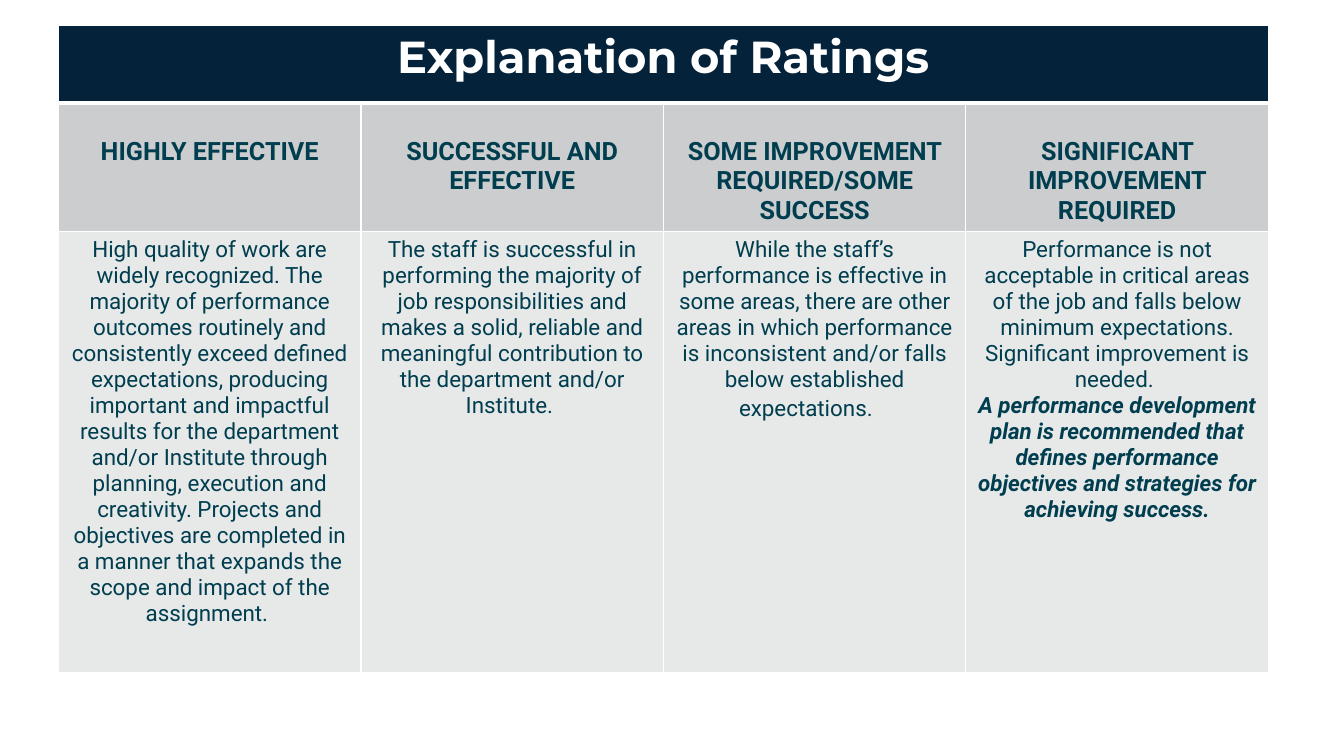
import lxml.etree
import pptx
import pptx.dml.color
import pptx.enum.text
import pptx.oxml.ns
import pptx.util

Inches = pptx.util.Inches
RGBColor = pptx.dml.color.RGBColor

NAVY = RGBColor(0x04, 0x23, 0x3B)
TEAL = RGBColor(0x00, 0x3E, 0x4F)
HEADING_GRAY = RGBColor(0xCC, 0xCD, 0xCE)
BODY_GRAY = RGBColor(0xE7, 0xE8, 0xE8)
WHITE = RGBColor(0xFF, 0xFF, 0xFF)

ROW_HEIGHTS = (0.77, 1.28, 4.37)
COLUMN_WIDTH = 3
HEADING_TOP_MARGIN = 0.34

RATINGS = [
    ("HIGHLY EFFECTIVE",
     "High quality of work are widely recognized. The majority of performance "
     "outcomes routinely and consistently exceed defined expectations, producing "
     "important and impactful results for the department and/or Institute through "
     "planning, execution and creativity. Projects and objectives are completed in "
     "a manner that expands the scope and impact of the assignment. "),
    ("SUCCESSFUL AND EFFECTIVE",
     "The staff is successful in performing the majority of job responsibilities "
     "and makes a solid, reliable and meaningful contribution to the department "
     "and/or Institute. "),
    ("SOME IMPROVEMENT REQUIRED/SOME SUCCESS",
     "While the staff’s performance is effective in some areas, there are other "
     "areas in which performance is inconsistent and/or falls below established "
     "expectations. "),
    ("SIGNIFICANT IMPROVEMENT REQUIRED",
     "Performance is not acceptable in critical areas of the job and falls below "
     "minimum expectations. Significant improvement is needed. "),
]
RECOMMENDATION = (
    "A performance development plan is recommended that defines performance "
    "objectives and strategies for achieving success."
)


def format_run(run, size, font_name="Roboto", color=TEAL, bold=False, italic=False):
    run.font.name = font_name
    run.font.size = pptx.util.Pt(size)
    run.font.color.rgb = color
    run.font.bold = bold
    run.font.italic = italic


def write_paragraph(paragraph, text, size, **style):
    paragraph.text = text
    paragraph.alignment = pptx.enum.text.PP_ALIGN.CENTER
    for run in paragraph.runs:
        format_run(run, size, **style)


def write_cell(cell, text, fill, size, **style):
    cell.fill.solid()
    cell.fill.fore_color.rgb = fill
    write_paragraph(cell.text_frame.paragraphs[0], text, size, **style)


def set_borders(cell, top=1, bottom=1):
    properties = cell._tc.get_or_add_tcPr()
    sides = (("lnL", 1), ("lnR", 1), ("lnT", top), ("lnB", bottom))
    for position, (side, points) in enumerate(sides):
        line = lxml.etree.Element(
            pptx.oxml.ns.qn(f"a:{side}"), w=str(pptx.util.Pt(points))
        )
        fill = lxml.etree.SubElement(line, pptx.oxml.ns.qn("a:solidFill"))
        lxml.etree.SubElement(fill, pptx.oxml.ns.qn("a:srgbClr"), val=str(WHITE))
        properties.insert(position, line)


def add_ratings_table(slide):
    table = slide.shapes.add_table(
        len(ROW_HEIGHTS), len(RATINGS), Inches(0.58), Inches(0.25),
        Inches(COLUMN_WIDTH * len(RATINGS)), Inches(sum(ROW_HEIGHTS)),
    ).table
    for row, height in zip(table.rows, ROW_HEIGHTS):
        row.height = Inches(height)
    for column in table.columns:
        column.width = Inches(COLUMN_WIDTH)

    title = table.cell(0, 0)
    title.merge(table.cell(0, len(RATINGS) - 1))
    write_cell(title, "Explanation of Ratings", NAVY, 32,
               font_name="Montserrat", color=WHITE, bold=True)
    for index, (rating, description) in enumerate(RATINGS):
        heading = table.cell(1, index)
        write_cell(heading, rating, HEADING_GRAY, 18, bold=True)
        heading.margin_top = Inches(HEADING_TOP_MARGIN)
        write_cell(table.cell(2, index), description, BODY_GRAY, 16)
        set_borders(table.cell(0, index), bottom=3)
        set_borders(heading, top=3)
        set_borders(table.cell(2, index))
    return table


def main():
    presentation = pptx.Presentation()
    presentation.slide_width = Inches(13.33)
    presentation.slide_height = Inches(7.5)
    slide = presentation.slides.add_slide(presentation.slide_layouts[6])

    table = add_ratings_table(slide)
    tab = table.cell(2, 2).text_frame.paragraphs[0].add_run()
    tab.text = "\t"
    format_run(tab, 18)
    write_paragraph(table.cell(2, 3).text_frame.add_paragraph(),
                    RECOMMENDATION, 16, bold=True, italic=True)

    presentation.save("out.pptx")


if __name__ == "__main__":
    main()
